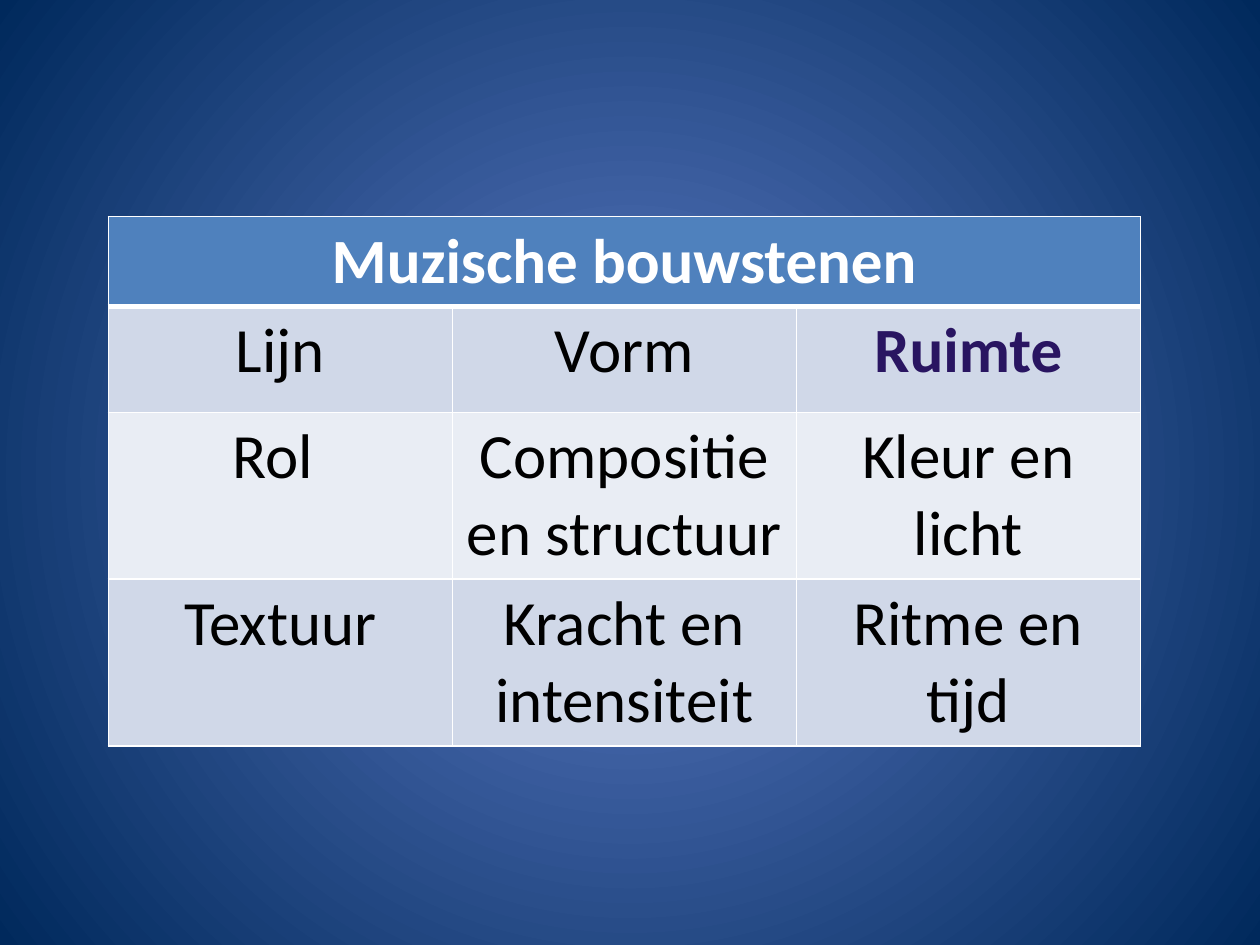
"""Build a slide with a table of artistic building blocks on a radial blue background."""
import dataclasses

import lxml.etree
import pptx
import pptx.dml.color
import pptx.enum.text
import pptx.oxml.ns
import pptx.slide
import pptx.table
import pptx.util
from pptx.util import Inches

qn = pptx.oxml.ns.qn


@dataclasses.dataclass(frozen=True)
class CellStyle:
    fill: str
    color: str = "000000"
    bold: bool = False
    top: float = 1
    bottom: float = 1


@dataclasses.dataclass(frozen=True)
class TableRow:
    height: float
    texts: tuple[str, ...]
    style: CellStyle


ROWS = (
    TableRow(0.7, ("Muzische bouwstenen", "", ""), CellStyle("4F81BD", "FFFFFF", True, bottom=3)),
    TableRow(0.84, ("Lijn", "Vorm", "Ruimte"), CellStyle("D0D8E8", top=3)),
    TableRow(1.32, ("Rol ", "Compositie en structuur", "Kleur en licht"), CellStyle("E9EDF4")),
    TableRow(1.32, ("Textuur", "Kracht en intensiteit", "Ritme en tijd"), CellStyle("D0D8E8")),
)
HIGHLIGHT = "Ruimte"
COLUMN_WIDTH = 2.73


def rgb(value: str) -> pptx.dml.color.RGBColor:
    return pptx.dml.color.RGBColor.from_string(value)


def paint_background(slide: pptx.slide.Slide, center: str, edge: str) -> None:
    fill = slide.background.fill
    fill.gradient()
    for stop, color in zip(fill.gradient_stops, (center, edge)):
        stop.color.rgb = rgb(color)
    gradient = slide.element.find(".//" + qn("a:gradFill"))
    gradient.remove(gradient.find(qn("a:lin")))
    shade = lxml.etree.SubElement(gradient, qn("a:path"), {"path": "circle"})
    lxml.etree.SubElement(shade, qn("a:fillToRect"), dict.fromkeys("ltrb", "50000"))


def add_borders(cell: pptx.table._Cell, style: CellStyle) -> None:
    properties = cell._tc.get_or_add_tcPr()
    widths = {"L": 1, "R": 1, "T": style.top, "B": style.bottom}
    for side, points in widths.items():
        width = str(int(pptx.util.Pt(points)))
        line = lxml.etree.SubElement(properties, qn(f"a:ln{side}"), {"w": width})
        paint = lxml.etree.SubElement(line, qn("a:solidFill"))
        lxml.etree.SubElement(paint, qn("a:srgbClr"), {"val": "FFFFFF"})


def fill_cell(cell: pptx.table._Cell, text: str, style: CellStyle) -> None:
    add_borders(cell, style)
    cell.fill.solid()
    cell.fill.fore_color.rgb = rgb(style.fill)
    if not text:
        return
    para = cell.text_frame.paragraphs[0]
    para.alignment = pptx.enum.text.PP_ALIGN.CENTER
    span = para.add_run()
    span.text = text
    span.font.name = "Calibri"
    span.font.size = pptx.util.Pt(36)
    span.font.bold = style.bold
    span.font.color.rgb = rgb(style.color)


def add_blocks_table(slide: pptx.slide.Slide) -> None:
    columns = len(ROWS[0].texts)
    height = sum(row.height for row in ROWS)
    table = slide.shapes.add_table(
        len(ROWS), columns, Inches(0.86), Inches(1.72),
        Inches(COLUMN_WIDTH * columns), Inches(height),
    ).table
    for column in table.columns:
        column.width = Inches(COLUMN_WIDTH)
    table.cell(0, 0).merge(table.cell(0, columns - 1))
    for row_index, row in enumerate(ROWS):
        table.rows[row_index].height = Inches(row.height)
        for column_index, text in enumerate(row.texts):
            style = row.style
            if text == HIGHLIGHT:
                style = dataclasses.replace(style, color="291561", bold=True)
            fill_cell(table.cell(row_index, column_index), text, style)


def main() -> None:
    deck = pptx.Presentation()
    deck.slide_width, deck.slide_height = Inches(10), Inches(7.5)
    slide = deck.slides.add_slide(deck.slide_layouts[6])
    paint_background(slide, "5E7CC5", "00295C")
    add_blocks_table(slide)
    deck.save("out.pptx")


if __name__ == "__main__":
    main()
